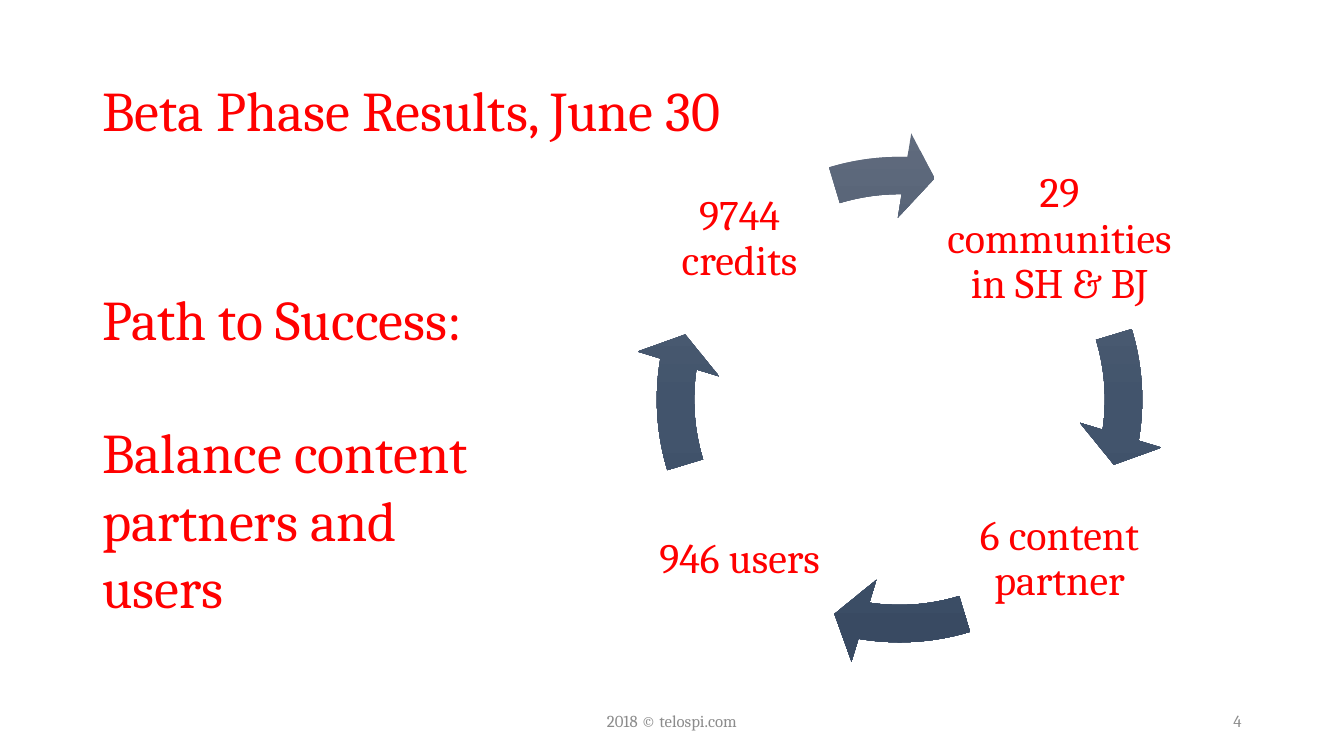
from copy import deepcopy
from dataclasses import dataclass

from pptx import Presentation
from pptx.dml.color import RGBColor as RGB
from pptx.enum.shapes import MSO_SHAPE as SHAPE
from pptx.enum.text import MSO_ANCHOR as ANCHOR, MSO_AUTO_SIZE as FIT, PP_ALIGN as ALIGN
from pptx.oxml.ns import qn
from pptx.util import Cm, Pt


@dataclass(frozen=True)
class Theme:
    font: str = "Cambria"
    accent: RGB = RGB(0xFF, 0x00, 0x00)
    muted: RGB = RGB(0x8C, 0x8C, 0x8C)
    arrow: tuple = ("606B7D", "42546C", "394A62")
    heading: Pt = Pt(40)
    label: Pt = Pt(30)
    small: Pt = Pt(12)


THEME = Theme()


def format_text(p, size, color, align=ALIGN.LEFT, spacing=None):
    p.alignment = align
    p.line_spacing = spacing
    p.font.name, p.font.size, p.font.color.rgb = THEME.font, size, color


def add_text(shapes, box, text, size, color, align, spacing=None, inset=None):
    """Add a wrapped, vertically centred text box; box is in centimetres."""
    tf = shapes.add_textbox(*map(Cm, box)).text_frame
    tf.word_wrap, tf.vertical_anchor = True, ANCHOR.MIDDLE
    if inset is not None:
        tf.margin_left = tf.margin_right = tf.margin_top = tf.margin_bottom = Cm(inset)
    tf.text = text
    format_text(tf.paragraphs[0], size, color, align, spacing)
    return tf


def set_title(s, box, text):
    sp = s.shapes.title
    sp.left, sp.top, sp.width, sp.height = map(Cm, box)
    tf = sp.text_frame
    tf.text = text
    tf.word_wrap, tf.auto_size, tf.vertical_anchor = True, FIT.NONE, ANCHOR.MIDDLE
    format_text(tf.paragraphs[0], THEME.heading, THEME.accent, spacing=0.9)


def add_message(s, box, lead, message):
    tf = add_text(s.shapes, box, lead, THEME.heading, THEME.accent, ALIGN.LEFT)
    tf.vertical_anchor, tf.auto_size = ANCHOR.TOP, FIT.SHAPE_TO_FIT_TEXT
    p = tf.add_paragraph()
    p.text = message
    format_text(p, THEME.heading, THEME.accent)
    p.space_before = Pt(47.5)


def add_arrow(shapes, box, start, end):
    """Add a circular arrow between two angles, clockwise from the right."""
    sp = shapes.add_shape(SHAPE.CIRCULAR_ARROW, *map(Cm, box))
    sp.shadow.inherit = False
    sp.line.fill.background()
    per_degree = 0.6
    values = (0.07, 7.76 * per_degree, end * per_degree, start * per_degree, 0.08)
    for i, value in enumerate(values):
        sp.adjustments[i] = value
    sp.fill.gradient()
    sp.fill.gradient_angle = 270
    stops = sp._element.spPr.find(qn("a:gradFill")).find(qn("a:gsLst"))
    stops.insert(1, deepcopy(stops[0]))
    for i, (stop, color) in enumerate(zip(sp.fill.gradient_stops, THEME.arrow)):
        stop.position = i / 2
        stop.color.rgb = RGB.from_string(color)


def add_cycle(s, box, steps):
    """Place four (text, label width, arrow end) steps clockwise from top right."""
    left, top, side, _ = box
    center_x, center_y = left + side / 2, top + side / 2
    offset, height = 4.03, 4.75
    corners = ((1, -1), (1, 1), (-1, 1), (-1, -1))
    shapes = s.shapes.add_group_shape().shapes
    for i, ((dx, dy), (text, width, end)) in enumerate(zip(corners, steps)):
        label = (center_x + dx * offset - width / 2,
                 center_y + dy * offset - height / 2, width, height)
        add_text(shapes, label, text, THEME.label, THEME.accent, ALIGN.CENTER, 0.9, 0.1)
        add_arrow(shapes, box, (343.1 + 90 * i) % 360, end)


def add_footer(s, box, text, number):
    left, top, width, height = box
    note, page = 11.43, 7.62
    add_text(s.shapes, (left + (width - note) / 2, top, note, height), text,
             THEME.small, THEME.muted, ALIGN.CENTER)
    add_text(s.shapes, (left + width - page, top, page, height), number,
             THEME.small, THEME.muted, ALIGN.RIGHT)


def main():
    prs = Presentation()
    prs.slide_width, prs.slide_height = Cm(33.87), Cm(19.05)
    s = prs.slides.add_slide(prs.slide_layouts[5])
    margin, content_width = 2.33, 29.21
    set_title(s, (margin, 1.02, content_width, 3.68), "Beta Phase Results, June 30")
    add_cycle(s, (15.95, 3.35, 13.44, 13.44), (
        ("29 communities in SH & BJ", 6.27, 9.14),
        ("6 content partner", 4.75, 99.14),
        ("946 users", 4.75, 189.14),
        ("9744 credits", 4.75, 271.28),
    ))
    add_message(s, (margin, 7.04, 10.29, 8.81), "Path to Success:",
                "Balance content partners and users")
    add_footer(s, (margin, 17.65, content_width, 1.02), "2018 © telospi.com", "4")
    prs.save("out.pptx")


if __name__ == "__main__":
    main()
